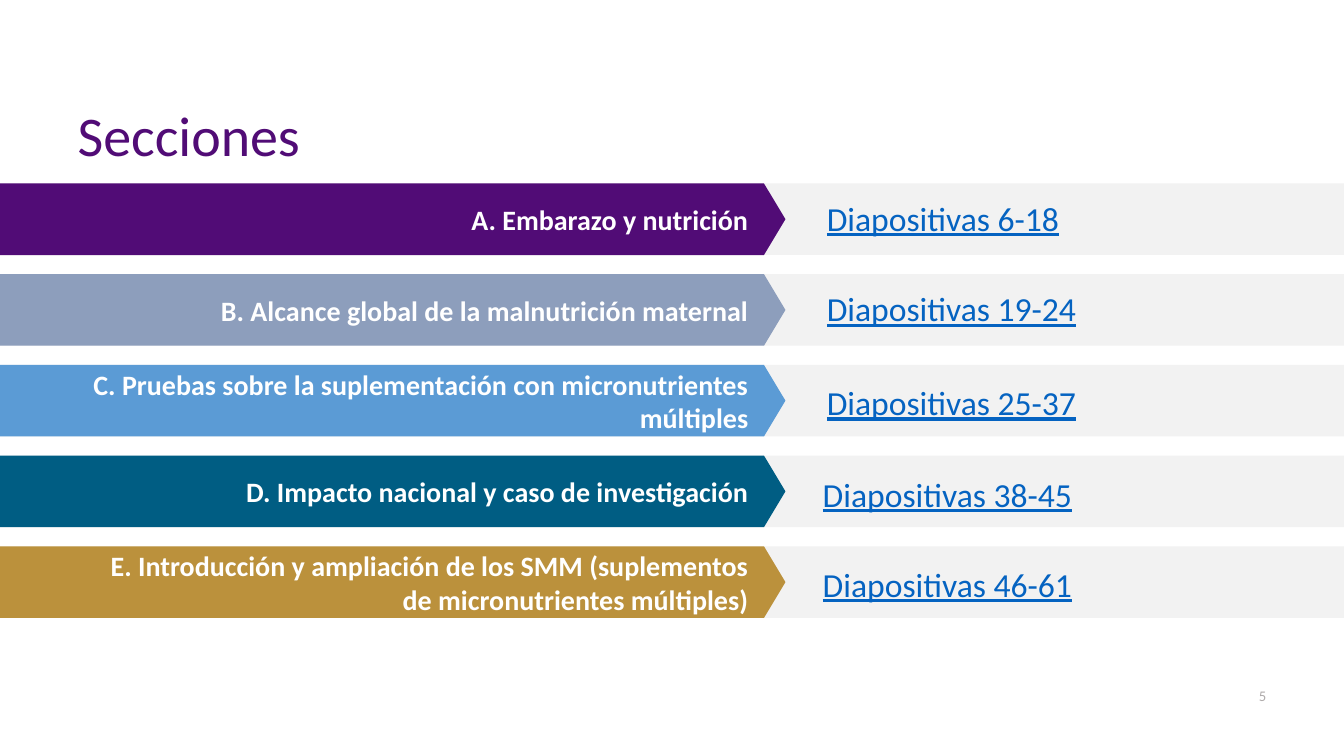
"""Build the section overview slide with five coloured arrow bands."""
from pptx import Presentation
from pptx.dml.color import RGBColor
from pptx.enum.shapes import MSO_SHAPE
from pptx.enum.text import MSO_ANCHOR, PP_ALIGN
from pptx.util import Inches, Pt


def add_band(s, kind, top, width, color):
    sp = s.shapes.add_shape(kind, 0, Inches(top), Inches(width), Inches(0.71))
    sp.shadow.inherit = False
    sp.fill.solid()
    sp.fill.fore_color.rgb = RGBColor.from_string(color)
    sp.line.fill.background()
    return sp


def set_text(sp, box, text, size, color, align=PP_ALIGN.LEFT, anchor=MSO_ANCHOR.MIDDLE,
             inset=0, spacing=1.0, bold=False, underline=False):
    sp.left, sp.top, sp.width, sp.height = [Inches(v) for v in box]
    tf = sp.text_frame
    tf.word_wrap = True
    tf.vertical_anchor = anchor
    tf.margin_left = tf.margin_right = Inches(inset)
    tf.margin_top = tf.margin_bottom = Inches(inset / 2)
    p = tf.paragraphs[0]
    p.alignment = align
    p.line_spacing = spacing
    r = p.add_run()
    r.text = text
    r.font.name = "Calibri"
    r.font.size = Pt(size)
    r.font.bold = bold
    r.font.underline = underline
    r.font.color.rgb = RGBColor.from_string(color)


prs = Presentation()
prs.slide_width, prs.slide_height = Inches(13.33), Inches(7.5)
s = prs.slides.add_slide(prs.slide_layouts[5])
set_text(s.shapes.title, (0.77, 0.32, 11.79, 1.35), "Secciones", 40, "510C76",
         anchor=MSO_ANCHOR.BOTTOM, spacing=0.9)

sections = [
    ("A. Embarazo y nutrición", "510C76", 0.98, "Diapositivas 6-18", 8.2, 1.83),
    ("B. Alcance global de la malnutrición maternal", "8D9EBC", 0.98,
     "Diapositivas 19-24", 8.2, 2.73),
    ("C. Pruebas sobre la suplementación con micronutrientes múltiples", "5B9BD5", 0,
     "Diapositivas 25-37", 8.2, 3.66),
    ("D. Impacto nacional y caso de investigación", "005D83", 0.98,
     "Diapositivas 38-45", 8.16, 4.57),
    ("E. Introducción y ampliación de los SMM (suplementos de micronutrientes múltiples)",
     "BB913C", 0.98, "Diapositivas 46-61", 8.16, 5.46),
]
for i, (name, color, left, pages, pages_left, pages_top) in enumerate(sections):
    top = 1.82 + 0.9 * i
    add_band(s, MSO_SHAPE.RECTANGLE, top, 13.33, "F2F2F2")
    arrow = add_band(s, MSO_SHAPE.PENTAGON, top, 7.79, color)
    arrow.adjustments[0] = 0.3
    set_text(s.shapes.add_textbox(0, 0, 0, 0), (left, top, 7.52 - left, 0.71),
             name, 20, "FFFFFF", align=PP_ALIGN.RIGHT, inset=0.1, bold=True)
    set_text(s.shapes.add_textbox(0, 0, 0, 0), (pages_left, pages_top, 4.95, 0.71),
             pages, 24, "0563C1", spacing=0.9, underline=True)

set_text(s.shapes.add_textbox(0, 0, 0, 0), (12.22, 6.7, 0.34, 0.4),
         "5", 10.5, "AFABAB", align=PP_ALIGN.RIGHT)
prs.save("out.pptx")
